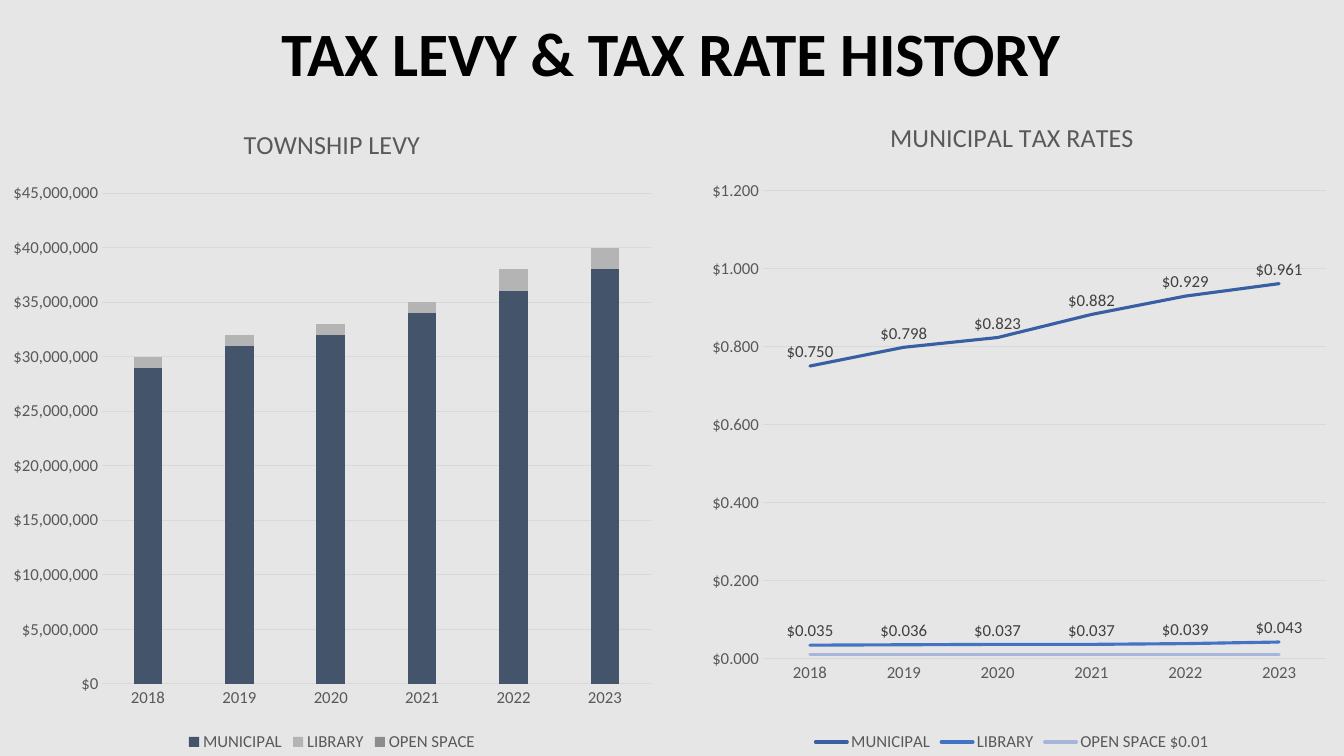
import pptx
import pptx.chart.data
import pptx.dml.color
import pptx.enum.chart
import pptx.enum.text
import pptx.oxml
import pptx.oxml.ns
import pptx.util

RGBColor = pptx.dml.color.RGBColor
Pt = pptx.util.Pt
ChartType = pptx.enum.chart.XL_CHART_TYPE

BACKGROUND = RGBColor(0xE7, 0xE6, 0xE6)
BLACK = RGBColor(0, 0, 0)
AXIS_TEXT = RGBColor(0x59, 0x59, 0x59)
LABEL_TEXT = RGBColor(0x40, 0x40, 0x40)
GRID = RGBColor(0xD9, 0xD9, 0xD9)
LEVY_COLORS = (RGBColor(0x44, 0x54, 0x6A), RGBColor(0xB4, 0xB4, 0xB4), RGBColor(0x8C, 0x8C, 0x8C))
RATE_COLORS = (RGBColor(0x38, 0x5F, 0xA3), RGBColor(0x44, 0x72, 0xC4), RGBColor(0xA8, 0xB5, 0xDB))
FONT = "Calibri"
WIDTH, HEIGHT = pptx.util.Inches(13.33), pptx.util.Inches(7.5)

YEARS = [str(year) for year in range(2018, 2024)]
MILLION = 1_000_000
LEVY = {
    "MUNICIPAL": (29, 31, 32, 34, 36, 38),
    "LIBRARY": (1, 1, 1, 1, 2, 2),
    "OPEN SPACE": (0,) * len(YEARS),
}
RATES = {
    "MUNICIPAL": (0.75, 0.798, 0.823, 0.882, 0.929, 0.961),
    "LIBRARY": (0.035, 0.036, 0.037, 0.037, 0.039, 0.043),
    "OPEN SPACE $0.01": (0.01,) * len(YEARS),
}
LEVY_FORMAT = '"$"#,##0'
RATE_FORMAT = '"$"#,##0.000'
RATE_PLOT = {"x": 0.125, "y": 0.143, "w": 0.848, "h": 0.71}


def share(left, top, width, height):
    return tuple(round(part) for part in (left * WIDTH, top * HEIGHT, width * WIDTH, height * HEIGHT))


def style_font(font, size, color, bold=False):
    font.name = FONT
    font.size = Pt(size)
    font.bold = bold
    font.color.rgb = color


def add_heading(page, box, text):
    frame = page.shapes.add_textbox(*box).text_frame
    frame.word_wrap = True
    frame.vertical_anchor = pptx.enum.text.MSO_ANCHOR.MIDDLE
    para = frame.paragraphs[0]
    para.text = text
    para.alignment = pptx.enum.text.PP_ALIGN.CENTER
    para.line_spacing = 0.9
    style_font(para.font, 44, BLACK, True)


def style_axes(chart, number_format, maximum, step):
    for axis in (chart.category_axis, chart.value_axis):
        axis.major_tick_mark = pptx.enum.chart.XL_TICK_MARK.NONE
        axis.minor_tick_mark = pptx.enum.chart.XL_TICK_MARK.NONE
        style_font(axis.tick_labels.font, 12, AXIS_TEXT)
    values = chart.value_axis
    values.minimum_scale, values.maximum_scale, values.major_unit = 0, maximum, step
    values.tick_labels.number_format = number_format
    values.tick_labels.number_format_is_linked = False
    values.format.line.fill.background()
    values.has_major_gridlines = True
    for line in (chart.category_axis.format.line, values.major_gridlines.format.line):
        line.color.rgb = GRID
        line.width = Pt(0.75)


def add_history_chart(page, box, kind, title, table, number_format, maximum, step):
    data = pptx.chart.data.CategoryChartData(number_format=number_format)
    data.categories = YEARS
    for name, values in table.items():
        data.add_series(name, values)
    chart = page.shapes.add_chart(kind, *box, data).chart
    style_font(chart.font, 10, BLACK)
    chart.has_title = True
    para = chart.chart_title.text_frame.paragraphs[0]
    para.text = title
    style_font(para.font, 18.6, AXIS_TEXT)
    chart.chart_title.include_in_layout = False
    chart.has_legend = True
    chart.legend.position = pptx.enum.chart.XL_LEGEND_POSITION.BOTTOM
    chart.legend.include_in_layout = False
    style_font(chart.legend.font, 12, AXIS_TEXT)
    style_axes(chart, number_format, maximum, step)
    chart.plots[0].vary_by_categories = False
    return chart


def add_levy_chart(page, box):
    levy = {name: [value * MILLION for value in values] for name, values in LEVY.items()}
    chart = add_history_chart(page, box, ChartType.COLUMN_STACKED, "TOWNSHIP LEVY",
                              levy, LEVY_FORMAT, 45 * MILLION, 5 * MILLION)
    plot = chart.plots[0]
    plot.gap_width, plot.overlap = 219, 100
    for series, color in zip(plot.series, LEVY_COLORS):
        series.format.fill.solid()
        series.format.fill.fore_color.rgb = color


def place_plot(chart, shares):
    area = chart.plots[0]._element.getparent()
    for layout in area.findall(pptx.oxml.ns.qn("c:layout")):
        area.remove(layout)
    modes = "".join(f'<c:{side}Mode val="edge"/>' for side in "xy")
    sizes = "".join(f'<c:{side} val="{value}"/>' for side, value in shares.items())
    area.insert(0, pptx.oxml.parse_xml(
        f'<c:layout {pptx.oxml.ns.nsdecls("c")}><c:manualLayout>'
        f'<c:layoutTarget val="inner"/>{modes}{sizes}</c:manualLayout></c:layout>'))


def add_rate_chart(page, box):
    chart = add_history_chart(page, box, ChartType.LINE, "MUNICIPAL TAX RATES",
                              RATES, RATE_FORMAT, 1.2, 0.2)
    place_plot(chart, RATE_PLOT)
    lines = list(chart.plots[0].series)
    for series, color in zip(lines, RATE_COLORS):
        series.smooth = False
        series.format.line.color.rgb = color
        series.format.line.width = Pt(2.25)
        series.format.line._get_or_add_ln().set("cap", "rnd")
    for series in lines[:2]:
        labels = series.data_labels
        labels.show_value = True
        labels.position = pptx.enum.chart.XL_LABEL_POSITION.ABOVE
        labels.number_format = RATE_FORMAT
        labels.number_format_is_linked = False
        style_font(labels.font, 12, LABEL_TEXT)


def main():
    deck = pptx.Presentation()
    deck.slide_width, deck.slide_height = WIDTH, HEIGHT
    page = deck.slides.add_slide(deck.slide_layouts[6])
    page.background.fill.solid()
    page.background.fill.fore_color.rgb = BACKGROUND
    add_heading(page, share(0.068, 0, 0.863, 0.149), "TAX LEVY & TAX RATE HISTORY")
    add_levy_chart(page, share(0, 0.137, 0.494, 0.863))
    add_rate_chart(page, share(0.506, 0.127, 0.494, 0.873))
    deck.save("out.pptx")


if __name__ == "__main__":
    main()
